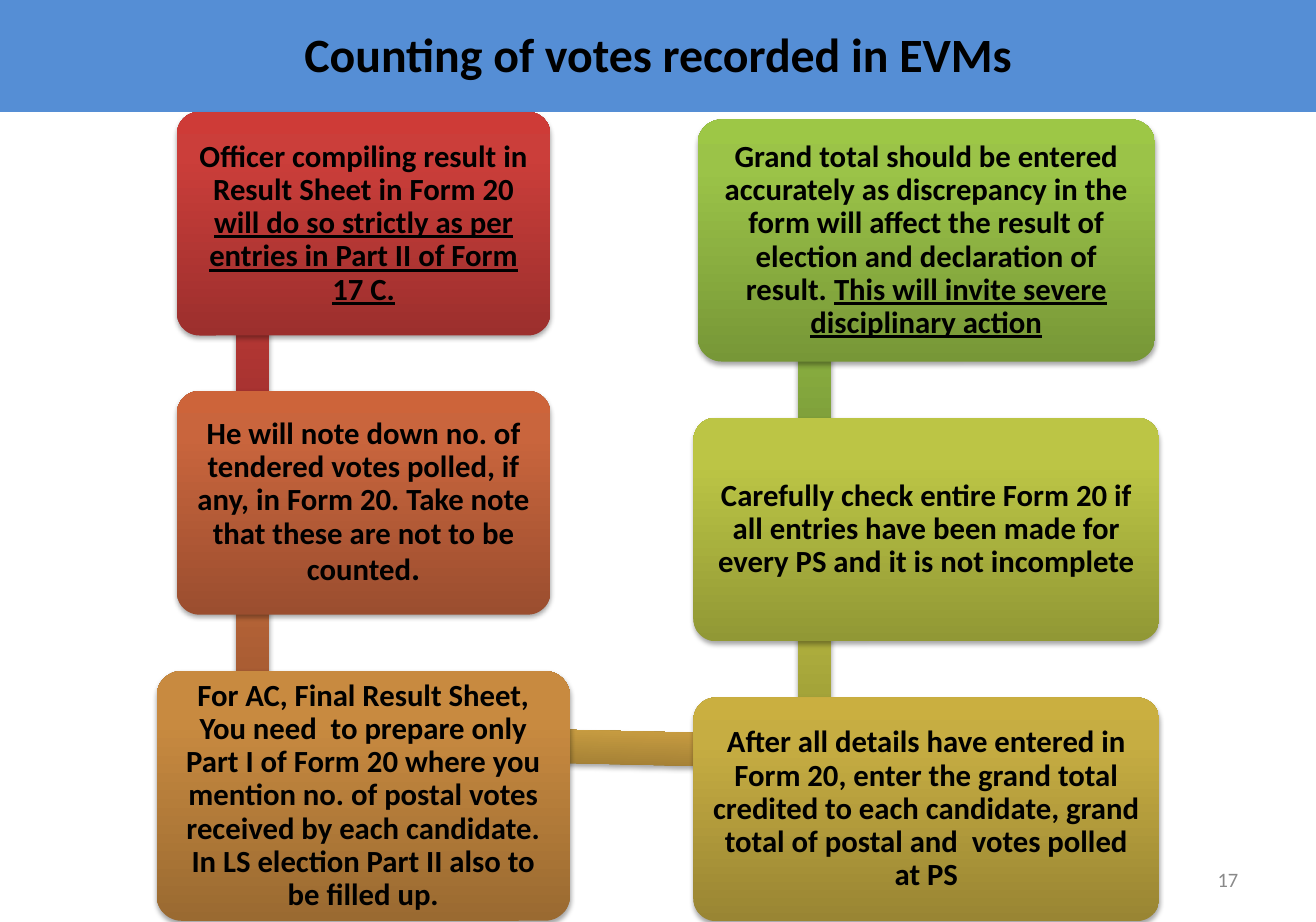
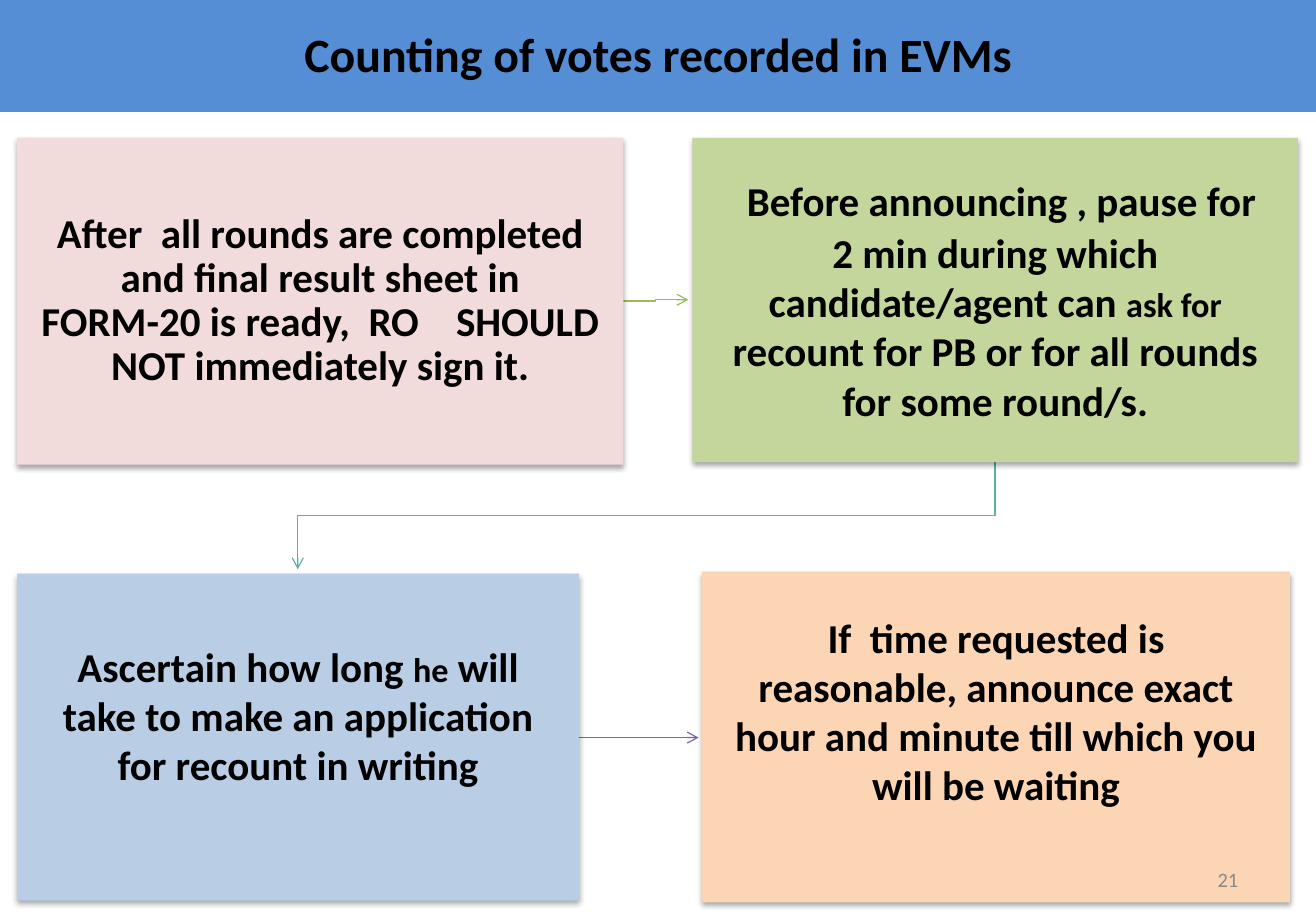
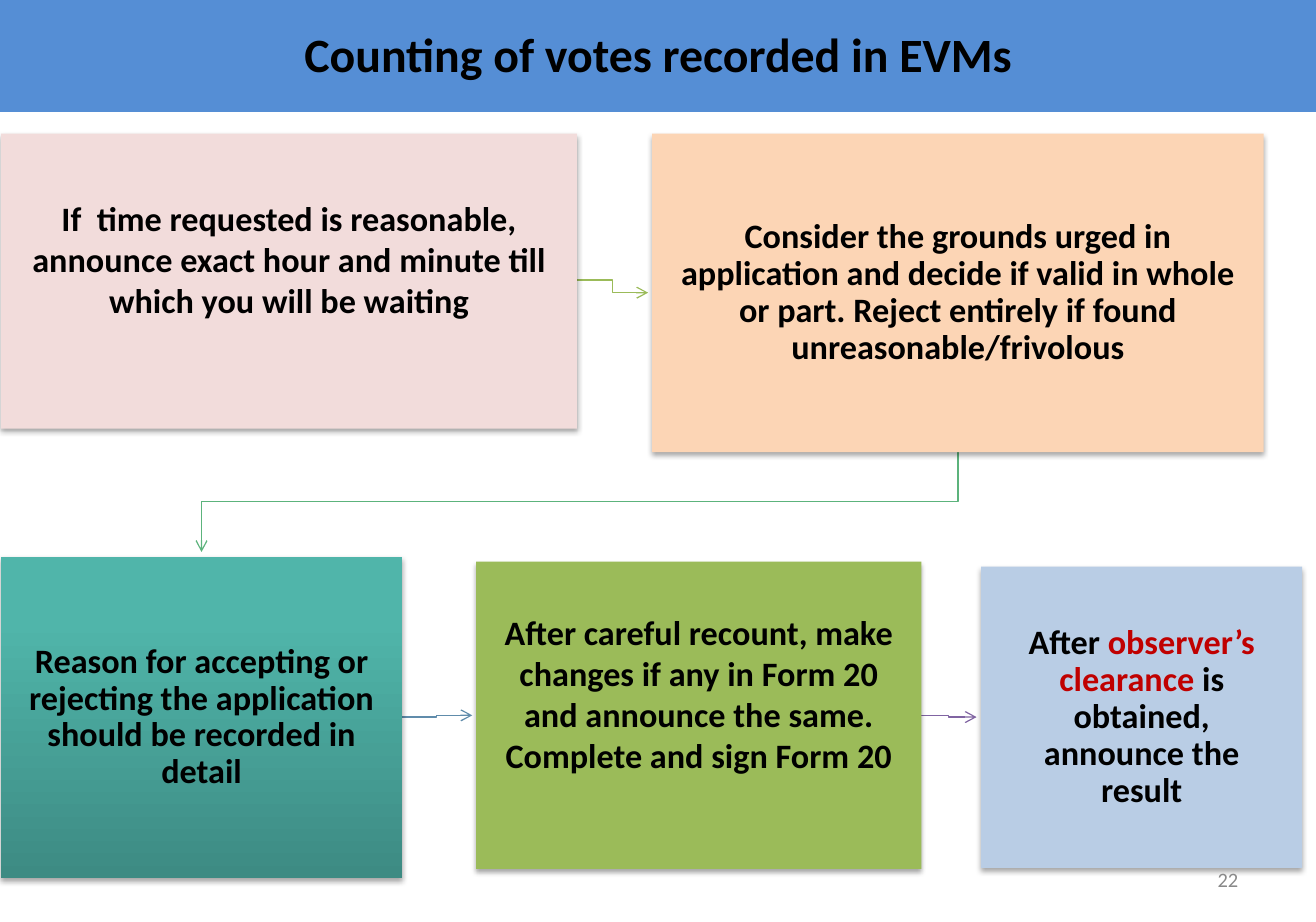
from lxml import etree
from pptx import Presentation
from pptx.dml.color import RGBColor
from pptx.enum.shapes import MSO_CONNECTOR, MSO_SHAPE
from pptx.enum.text import MSO_ANCHOR, PP_ALIGN
from pptx.oxml.ns import qn
from pptx.util import Pt

RECTANGLE = MSO_SHAPE.RECTANGLE
ROUNDED = MSO_SHAPE.ROUNDED_RECTANGLE
STRAIGHT = MSO_CONNECTOR.STRAIGHT
ELBOW = MSO_CONNECTOR.ELBOW
MIDDLE = MSO_ANCHOR.MIDDLE
CENTER = PP_ALIGN.CENTER
RIGHT = PP_ALIGN.RIGHT

WIDTH, HEIGHT = 770.4, 540
TITLE = "Counting of votes recorded in EVMs"
FONT = "Calibri"
COLORS = {
    "band": "558ED5",
    "text": "000000",
    "number": "898989",
    "accent": "C00000",
    "pink": "F2DCDB",
    "light green": "C3D69B",
    "light blue": "B9CDE5",
    "peach": "FCD5B5",
    "green": "9BBB59",
    "purple": "8064A2",
    "sea": "5EAFA6",
    "emerald": "5CB37C",
    "steel": "608CAB",
}
GRADIENTS = {
    "red": ("9C2F2D", "CB3E3A", "CE3B37"),
    "rust": ("9B4E2F", "C9653D", "CD643A"),
    "rust bar": ("9B552F", "C96E3D", "CD6E3B"),
    "orange": ("9A6A31", "C88A40", "CB8B3D"),
    "amber bar": ("997832", "C79C41", "CB9D3F"),
    "gold": ("998533", "C6AD42", "CAAF40"),
    "olive bar": ("989835", "C5C545", "C8C942"),
    "olive": ("919835", "BCC545", "BFC843"),
    "lime": ("779737", "9BC348", "9DC746"),
    "teal": ("3D8B83", "50B5AA", "4EB8AC"),
}


def rgb(name):
    return RGBColor.from_string(COLORS[name])


def add_xml(parent, tag, **attributes):
    return etree.SubElement(parent, qn(tag), attributes)


class Deck:
    def __init__(self):
        self.presentation = Presentation()
        self.presentation.slide_width = Pt(WIDTH)
        self.presentation.slide_height = Pt(HEIGHT)
        self.slide = None

    def add_slide(self):
        self.slide = self.presentation.slides.add_slide(self.presentation.slide_layouts[5])
        title = self.slide.shapes.title
        title.left, title.top, title.width, title.height = 0, Pt(-3), Pt(WIDTH), Pt(68.5)
        title.fill.solid()
        title.fill.fore_color.rgb = rgb("band")
        title.text_frame.vertical_anchor = MIDDLE
        self.set_text(title.text_frame.paragraphs[0], [(TITLE, {})], 28)

    def set_text(self, paragraph, runs, size, color="text", bold=True, align=CENTER):
        paragraph.alignment = align
        font = paragraph.font
        font.name, font.size, font.bold = FONT, Pt(size), bold
        font.color.rgb = rgb(color)
        for text, changes in runs:
            run = paragraph.add_run()
            run.text = text
            if "size" in changes:
                run.font.size = Pt(changes["size"])
            if "underline" in changes:
                run.font.underline = changes["underline"]
            if "color" in changes:
                run.font.color.rgb = rgb(changes["color"])

    def block(self, kind, place, fill):
        shape = self.slide.shapes.add_shape(kind, *map(Pt, place))
        if fill in GRADIENTS:
            shape.fill.gradient()
            shape.fill.gradient_angle = 90
            stops = shape._element.spPr.find(qn("a:gradFill")).find(qn("a:gsLst"))
            for stop in list(stops):
                stops.remove(stop)
            for position, value in zip((0, 80000, 100000), GRADIENTS[fill]):
                stop = add_xml(stops, "a:gs", pos=str(position))
                add_xml(stop, "a:srgbClr", val=value)
        else:
            shape.fill.solid()
            shape.fill.fore_color.rgb = rgb(fill)
        shape.line.fill.background()
        shape.shadow.inherit = False
        effects = shape._element.spPr.find(qn("a:effectLst"))
        shadow = add_xml(effects, "a:outerShdw", blurRad=str(Pt(3.1)), dist=str(Pt(1.8)),
                         dir="5400000", rotWithShape="0")
        add_xml(add_xml(shadow, "a:srgbClr", val=COLORS["text"]), "a:alpha", val="35000")
        return shape

    def box(self, place, fill, runs, size, inset, kind=RECTANGLE, spacing=0.9, lift=0):
        shape = self.block(kind, place, fill)
        if kind == ROUNDED:
            shape.adjustments[0] = 0.1
        frame = shape.text_frame
        frame.word_wrap = True
        frame.vertical_anchor = MIDDLE
        frame.margin_left = frame.margin_right = frame.margin_top = Pt(inset)
        frame.margin_bottom = Pt(inset + lift)
        paragraph = frame.paragraphs[0]
        paragraph.line_spacing = spacing
        self.set_text(paragraph, runs, size)
        return frame

    def bar(self, place, fill, rotation=0):
        self.block(RECTANGLE, place, fill).rotation = rotation

    def arrow(self, start, end, color, downward=False):
        (x1, y1), (x2, y2) = start, end
        if downward:
            x, y = (x1 + x2) / 2, (y1 + y2) / 2
            half_width, half_height = (y2 - y1) / 2, (x1 - x2) / 2
            x1, x2 = x - half_width, x + half_width
            y1, y2 = y - half_height, y + half_height
        kind = STRAIGHT if y1 == y2 else ELBOW
        connector = self.slide.shapes.add_connector(kind, Pt(x1), Pt(y1), Pt(x2), Pt(y2))
        if downward:
            connector.rotation = 90
        connector.line.color.rgb = rgb(color)
        connector.line.width = Pt(0.75)
        add_xml(connector._element.spPr.find(qn("a:ln")), "a:tailEnd", type="arrow")
        add_xml(connector._element.spPr, "a:effectLst")

    def number(self, value):
        text_box = self.slide.shapes.add_textbox(Pt(552), Pt(500.5), Pt(180), Pt(28.8))
        frame = text_box.text_frame
        frame.word_wrap = True
        frame.vertical_anchor = MIDDLE
        self.set_text(frame.paragraphs[0], [(str(value), {})], 12, "number", False, RIGHT)


def build_result_sheet(deck):
    deck.add_slide()
    for left, top, height, fill in (
        (138, 98, 163.5, "red"),
        (138, 262, 170.5, "rust bar"),
        (467.3, 277, 163.5, "olive bar"),
        (467.3, 107.5, 168.5, "lime"),
    ):
        deck.bar((left, top, 19.5, height), fill)
    deck.bar((147.6, 427, 329, 19.5), "amber bar", 1.3)
    underlined = {"underline": True}
    for place, fill, runs in (
        ((103.6, 65.5, 218.6, 131), "red", [
            ("Officer compiling result in Result Sheet in Form 20 ", {}),
            ("will do so strictly as per entries in Part II of Form 17 C.", underlined)]),
        ((103.6, 229, 218.6, 131), "rust", [
            ("He will note down no. of tendered votes polled, if any, in Form 20. "
             "Take note that these are not to be counted", {}),
            (".", {"size": 20})]),
        ((91.7, 393, 242, 146.3), "orange", [
            ("For AC, Final Result Sheet, You need  to prepare only Part I of Form 20 "
             "where you mention no. of postal votes received by each candidate. "
             "In LS election Part II also to be filled up.", {})]),
        ((406, 408.5, 272.7, 131), "gold", [
            ("After all details have entered in Form 20, enter the grand total credited "
             "to each candidate, grand total of postal and  votes polled at PS", {})]),
        ((406, 244.6, 272.7, 131), "olive", [
            ("Carefully check entire Form 20 if all entries have been made for every PS "
             "and it is not incomplete", {})]),
        ((408.4, 70, 267.8, 141.8), "lime", [
            ("Grand total should be entered accurately as discrepancy in the form will "
             "affect the result of election and declaration of result. ", {}),
            ("This will invite severe disciplinary action", underlined)]),
    ):
        deck.box(place, fill, runs, 18, 5.4, ROUNDED)
    deck.number(17)


def build_recount_request(deck):
    deck.add_slide()
    deck.arrow((364.5, 176.4), (403, 175.6), "green")
    deck.arrow((582.5, 270.7), (174.3, 333.4), "sea", downward=True)
    deck.arrow((339, 432), (409, 432), "purple")
    small = {"size": 20}
    deck.box((10, 80.7, 355, 191.5), "pink", [
        ("After  all rounds are completed and final result sheet in FORM-20 is ready,  "
         "RO    SHOULD NOT immediately sign it.", {})], 24, 13.4)
    frame = deck.box((405.4, 80.7, 354.5, 190), "light green", [
        (" ", {"size": 32}),
        ("Before announcing , pause for 2 min during which candidate/agent can ", {}),
        ("ask for ", small),
        ("recount for PB or for all rounds for some round/s.", {})], 24, 18, spacing=1)
    frame.margin_top, frame.margin_bottom = Pt(13), Pt(21)
    deck.box((10, 336, 329, 191.5), "light blue", [
        ("Ascertain how long ", {}),
        ("he", small),
        (" will take to make an application for recount in writing", {})],
        24, 13.4, spacing=1, lift=26)
    deck.box((411, 334.8, 344.2, 193.7), "peach", [
        ("If  time requested is reasonable, announce exact hour and minute till which "
         "you will be waiting", {})], 24, 13.4, spacing=1, lift=31)
    deck.number(21)


def build_recount_decision(deck):
    deck.add_slide()
    deck.arrow((337.7, 164), (379.4, 171.4), "green")
    deck.arrow((560.9, 264.5), (118, 323.3), "emerald", downward=True)
    deck.arrow((235, 420), (276.5, 419), "steel")
    deck.arrow((539.3, 419), (571.7, 420), "purple")
    for place, fill, spacing, lift, runs in (
        ((0.7, 78.3, 337, 172.8), "pink", 1, 26, [
            ("If  time requested is reasonable, announce exact hour and minute till "
             "which you will be waiting", {})]),
        ((381.8, 78.3, 358, 186.5), "peach", 0.9, 0, [
            ("Consider the grounds urged in application and decide if valid in whole "
             "or part. Reject entirely if found unreasonable/frivolous", {})]),
        ((0.7, 326.2, 234.7, 188), "teal", 0.9, 0, [
            ("Reason for accepting or rejecting the application should be recorded in "
             "detail", {})]),
        ((278.8, 329, 260.6, 180), "green", 1, 26, [
            ("After careful recount, make changes if any in Form 20 and announce the "
             "same. Complete and sign Form 20", {})]),
        ((574.4, 331.9, 188, 176.4), "light blue", 0.9, 0, [
            ("After ", {}),
            ("observer’s clearance", {"color": "accent"}),
            (" is obtained, announce the result", {})]),
    ):
        deck.box(place, fill, runs, 20, 11.2, spacing=spacing, lift=lift)
    deck.number(22)


def main():
    deck = Deck()
    build_result_sheet(deck)
    build_recount_request(deck)
    build_recount_decision(deck)
    deck.presentation.save("out.pptx")


if __name__ == "__main__":
    main()
